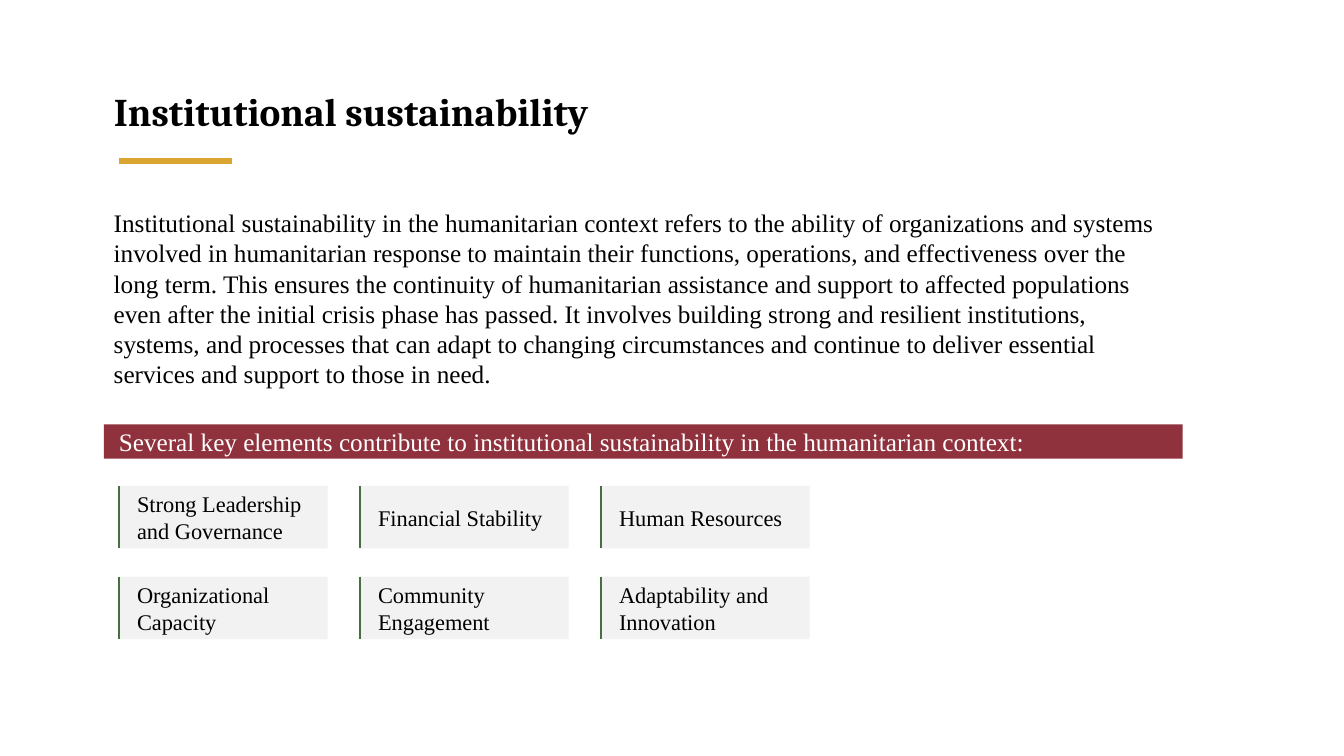
from dataclasses import dataclass

from lxml import etree
from pptx import Presentation
from pptx.dml.color import RGBColor
from pptx.enum.shapes import MSO_CONNECTOR, MSO_SHAPE
from pptx.enum.text import MSO_ANCHOR, PP_ALIGN
from pptx.oxml.ns import qn
from pptx.shapes.autoshape import Shape
from pptx.slide import Slide
from pptx.util import Inches, Pt

STRAIGHT = MSO_CONNECTOR.STRAIGHT
RECTANGLE = MSO_SHAPE.RECTANGLE
TOP, MIDDLE = MSO_ANCHOR.TOP, MSO_ANCHOR.MIDDLE
LEFT = PP_ALIGN.LEFT
TITLE_ONLY = 5


@dataclass(frozen=True)
class TextStyle:
    font: str
    size: int
    color: str
    bold: bool = False


@dataclass(frozen=True)
class Theme:
    title: TextStyle = TextStyle("Cambria", 28, "000000", True)
    body: TextStyle = TextStyle("Times New Roman", 18, "000000")
    banner: TextStyle = TextStyle("Times New Roman", 18, "FFFFFF")
    card: TextStyle = TextStyle("Times New Roman", 16, "000000")
    gold: str = "DAA531"
    maroon: str = "90323D"
    green: str = "4A6E44"
    gray: str = "F2F2F2"


@dataclass(frozen=True)
class Box:
    left: float
    top: float
    width: float
    height: float

    def lengths(self) -> list[int]:
        return [Inches(v) for v in (self.left, self.top, self.width, self.height)]


THEME = Theme()

# Content
TITLE = "Institutional sustainability"
DEFINITION = (
    "Institutional sustainability in the humanitarian context refers to the ability of "
    "organizations and systems involved in humanitarian response to maintain their functions, "
    "operations, and effectiveness over the long term. This ensures the continuity of "
    "humanitarian assistance and support to affected populations even after the initial crisis "
    "phase has passed. It involves building strong and resilient institutions, systems, and "
    "processes that can adapt to changing circumstances and continue to deliver essential "
    "services and support to those in need."
)
BANNER = "Several key elements contribute to institutional sustainability in the humanitarian context:"
KEY_ELEMENTS = [
    ["Strong Leadership", "and Governance"],
    ["Financial Stability"],
    ["Human Resources"],
    ["Organizational Capacity"],
    ["Community Engagement"],
    ["Adaptability and Innovation"],
]

# Card grid
COLUMNS = 3
FIRST_CARD = Box(1.18, 4.82, 2.07, 0.62)
COLUMN_STEP, ROW_STEP = 2.39, 0.9


def write(shape: Shape, paragraphs: list[str], style: TextStyle, anchor: MSO_ANCHOR,
          left: float = 0.1, right: float = 0.1, vertical: float = 0.05) -> None:
    frame = shape.text_frame
    frame.word_wrap = True
    frame.vertical_anchor = anchor
    frame.margin_left, frame.margin_right = Inches(left), Inches(right)
    frame.margin_top = frame.margin_bottom = Inches(vertical)
    for index, text in enumerate(paragraphs):
        paragraph = frame.add_paragraph() if index else frame.paragraphs[0]
        paragraph.alignment = LEFT
        run = paragraph.add_run()
        run.text = text
        run.font.name = style.font
        run.font.size = Pt(style.size)
        run.font.bold = style.bold
        run.font.color.rgb = RGBColor.from_string(style.color)


def add_panel(slide: Slide, box: Box, fill: str) -> Shape:
    panel = slide.shapes.add_shape(RECTANGLE, *box.lengths())
    panel.shadow.inherit = False
    panel.fill.solid()
    panel.fill.fore_color.rgb = RGBColor.from_string(fill)
    panel.line.fill.background()
    return panel


def add_rule(slide: Slide, box: Box, color: str, weight: float) -> None:
    left, top, width, height = box.lengths()
    rule = slide.shapes.add_connector(STRAIGHT, left, top, left + width, top + height)
    rule.line.color.rgb = RGBColor.from_string(color)
    rule.line.width = Pt(weight)
    etree.SubElement(rule._element.spPr, qn("a:effectLst"))


def add_card(slide: Slide, box: Box, lines: list[str]) -> None:
    card = add_panel(slide, box, THEME.gray)
    write(card, lines, THEME.card, MIDDLE, left=0.18, right=0.23, vertical=0)
    add_rule(slide, Box(box.left, box.top, 0, box.height), THEME.green, 1.5)


def main() -> None:
    deck = Presentation()
    deck.slide_width, deck.slide_height = Inches(13.33), Inches(7.5)
    slide = deck.slides.add_slide(deck.slide_layouts[TITLE_ONLY])

    # Title and its underline
    title = slide.shapes.title
    title.left, title.top, title.width, title.height = Box(1.03, 0.82, 10.44, 0.57).lengths()
    write(title, [TITLE], THEME.title, TOP)
    add_rule(slide, Box(1.18, 1.6, 1.12, 0), THEME.gold, 4.5)

    # Definition
    definition = slide.shapes.add_textbox(*Box(1.03, 2.01, 10.7, 1.92).lengths())
    write(definition, [DEFINITION], THEME.body, TOP)

    # Banner
    banner = add_panel(slide, Box(1.03, 4.21, 10.7, 0.34), THEME.maroon)
    write(banner, [BANNER], THEME.banner, MIDDLE, left=0.15, vertical=0)

    # Key elements
    for index, lines in enumerate(KEY_ELEMENTS):
        row, column = divmod(index, COLUMNS)
        box = Box(FIRST_CARD.left + column * COLUMN_STEP, FIRST_CARD.top + row * ROW_STEP,
                  FIRST_CARD.width, FIRST_CARD.height)
        add_card(slide, box, lines)

    deck.save("out.pptx")


if __name__ == "__main__":
    main()
